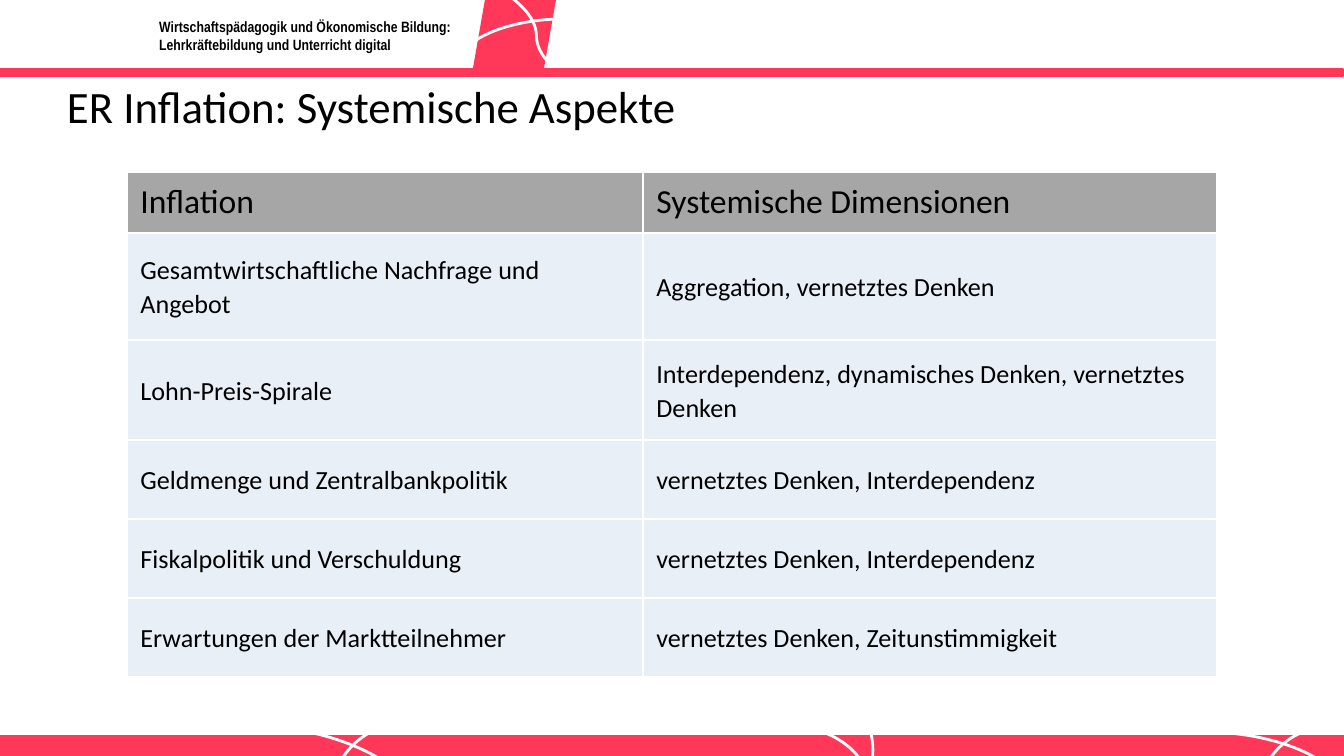
import dataclasses

import pptx
import pptx.dml.color
import pptx.enum.shapes
import pptx.enum.text
import pptx.oxml
import pptx.oxml.ns
import pptx.util

EMU_PER_PX = 914400 / 134.4
RED, WHITE, BLACK = "FF3859", "FFFFFF", "000000"
HEADER_GREY, ROW_BLUE = "A6A6A6", "E9EFF7"
DRAWING_NS = pptx.oxml.ns.nsdecls("a")


@dataclasses.dataclass(frozen=True)
class Box:
    left: int
    top: int
    width: int
    height: int


@dataclasses.dataclass(frozen=True)
class Arc:
    box: Box
    rotation: float
    start: float
    end: float


@dataclasses.dataclass(frozen=True)
class FooterPart:
    bar: Box
    arcs: tuple[Arc, ...]


FOOTER = (
    FooterPart(Box(448, 736, 469, 20), (
        Arc(Box(741, 728, 126, 78), 15.3, 163.39, 213.62),
        Arc(Box(743, 685, 134, 125), 74.9, 163.39, 213.62))),
    FooterPart(Box(0, 736, 448, 20), (
        Arc(Box(211, 734, 202, 78), 14.7, 156.69, 213.92),
        Arc(Box(324, 732, 134, 116), 300.6, 157.44, 213.62))),
    FooterPart(Box(917, 736, 427, 20), (
        Arc(Box(1132, 734, 206, 78), 7.5, 143.73, 213.62),
        Arc(Box(1251, 734, 134, 118), 300.6, 163.39, 213.62))),
)
COLUMN_WIDTHS = (516, 574)
ROW_HEIGHTS = (61, 107, 100, 79, 79, 79)
ASPECTS = (
    ("Inflation", "Systemische Dimensionen"),
    ("Gesamtwirtschaftliche Nachfrage und Angebot", "Aggregation, vernetztes Denken"),
    ("Lohn-Preis-Spirale", "Interdependenz, dynamisches Denken, vernetztes Denken"),
    ("Geldmenge und Zentralbankpolitik", "vernetztes Denken, Interdependenz"),
    ("Fiskalpolitik und Verschuldung", "vernetztes Denken, Interdependenz"),
    ("Erwartungen der Marktteilnehmer", "vernetztes Denken, Zeitunstimmigkeit"),
)


def px(length: int) -> pptx.util.Emu:
    return pptx.util.Emu(round(length * EMU_PER_PX))


def place(box: Box) -> tuple:
    return px(box.left), px(box.top), px(box.width), px(box.height)


def rgb(color: str) -> pptx.dml.color.RGBColor:
    return pptx.dml.color.RGBColor.from_string(color)


def fill_solid(target, color: str) -> None:
    target.fill.solid()
    target.fill.fore_color.rgb = rgb(color)


def stroke(shape, color: str, width: float) -> None:
    shape.line.color.rgb = rgb(color)
    shape.line.width = pptx.util.Pt(width)


def format_text(frame, size: int, font: str, bold: bool = False) -> None:
    for paragraph in frame.paragraphs:
        for run in paragraph.runs:
            run.font.size = pptx.util.Pt(size)
            run.font.name = font
            run.font.bold = bold
            run.font.color.rgb = rgb(BLACK)


def draw_bar(shapes, box: Box) -> None:
    bar = shapes.add_shape(pptx.enum.shapes.MSO_SHAPE.RECTANGLE, *place(box))
    bar.shadow.inherit = False
    fill_solid(bar, RED)
    stroke(bar, RED, 1)


def draw_arc(shapes, arc: Arc) -> None:
    curve = shapes.add_shape(pptx.enum.shapes.MSO_SHAPE.ARC, *place(arc.box))
    curve.shadow.inherit = False
    curve.adjustments[0] = arc.start
    curve.adjustments[1] = arc.end
    curve.rotation = arc.rotation
    curve.fill.background()
    stroke(curve, WHITE, 1.5)


def draw_curve(shapes, begin: tuple[int, int], end: tuple[int, int]) -> None:
    curve = shapes.add_connector(
        pptx.enum.shapes.MSO_CONNECTOR.CURVE, *map(px, begin + end))
    stroke(curve, WHITE, 1.5)
    curve.element.spPr.append(pptx.oxml.parse_xml(f"<a:effectLst {DRAWING_NS}/>"))


def draw_borders(cell) -> None:
    properties = cell._tc.get_or_add_tcPr()
    for side in ("a:lnL", "a:lnR", "a:lnT", "a:lnB"):
        properties.append(pptx.oxml.parse_xml(
            f'<{side} {DRAWING_NS} w="12192"><a:solidFill>'
            f'<a:srgbClr val="{WHITE}"/></a:solidFill></{side}>'))


def draw_masthead(shapes) -> None:
    # Slanted red field
    builder = shapes.build_freeform(485, 0, EMU_PER_PX)
    builder.add_line_segments([(556, 0), (543, 74), (472, 74)], close=True)
    field = builder.convert_to_shape()
    field.shadow.inherit = False
    fill_solid(field, RED)
    field.line.fill.background()

    # Project name
    project = shapes.add_textbox(*place(Box(146, 11, 403, 48))).text_frame
    project.word_wrap = True
    project.auto_size = pptx.enum.text.MSO_AUTO_SIZE.SHAPE_TO_FIT_TEXT
    project.text = ("Wirtschaftspädagogik und Ökonomische Bildung:\n"
                    "Lehrkräftebildung und Unterricht digital")
    format_text(project, 8, "Arial Narrow", bold=True)

    # White curves across the red field
    draw_curve(shapes, (374, -42), (699, 114))
    draw_curve(shapes, (562, 19), (368, 93))


def draw_footer(shapes) -> None:
    for part in FOOTER:
        draw_bar(shapes, part.bar)
        for arc in part.arcs:
            draw_arc(shapes, arc)


def set_title(title) -> None:
    title.left, title.top, title.width, title.height = place(Box(67, 46, 1210, 126))
    frame = title.text_frame
    frame.text = "ER Inflation: Systemische Aspekte"
    frame.margin_left = frame.margin_right = frame.margin_top = frame.margin_bottom = 0
    frame.vertical_anchor = pptx.enum.text.MSO_ANCHOR.MIDDLE
    frame.auto_size = pptx.enum.text.MSO_AUTO_SIZE.NONE
    frame.paragraphs[0].alignment = pptx.enum.text.PP_ALIGN.LEFT
    frame.paragraphs[0].line_spacing = 0.9
    format_text(frame, 24, "Calibri")
    # Bring the title in front of the white curves
    title.element.getparent().append(title.element)


def draw_aspects(shapes) -> None:
    box = Box(127, 172, sum(COLUMN_WIDTHS), sum(ROW_HEIGHTS))
    table = shapes.add_table(len(ASPECTS), len(COLUMN_WIDTHS), *place(box)).table
    table.horz_banding = False
    for column, width in zip(table.columns, COLUMN_WIDTHS):
        column.width = px(width)
    for index, (row, height, texts) in enumerate(zip(table.rows, ROW_HEIGHTS, ASPECTS)):
        row.height = px(height)
        is_header = index == 0
        for cell, text in zip(row.cells, texts):
            draw_borders(cell)
            fill_solid(cell, HEADER_GREY if is_header else ROW_BLUE)
            if not is_header:
                cell.vertical_anchor = pptx.enum.text.MSO_ANCHOR.MIDDLE
            cell.text_frame.text = text
            paragraph = cell.text_frame.paragraphs[0]
            paragraph.line_spacing = 1.07
            paragraph.space_after = pptx.util.Pt(8)
            format_text(cell.text_frame, 18 if is_header else 14, "Calibri")


def main() -> None:
    presentation = pptx.Presentation()
    presentation.slide_width, presentation.slide_height = px(1344), px(756)
    slide = presentation.slides.add_slide(presentation.slide_layouts.get_by_name("Title Only"))
    draw_masthead(slide.shapes)
    draw_footer(slide.shapes)
    draw_bar(slide.shapes, Box(0, 69, 1343, 7))
    set_title(slide.shapes.title)
    draw_aspects(slide.shapes)
    presentation.save("out.pptx")


if __name__ == "__main__":
    main()
